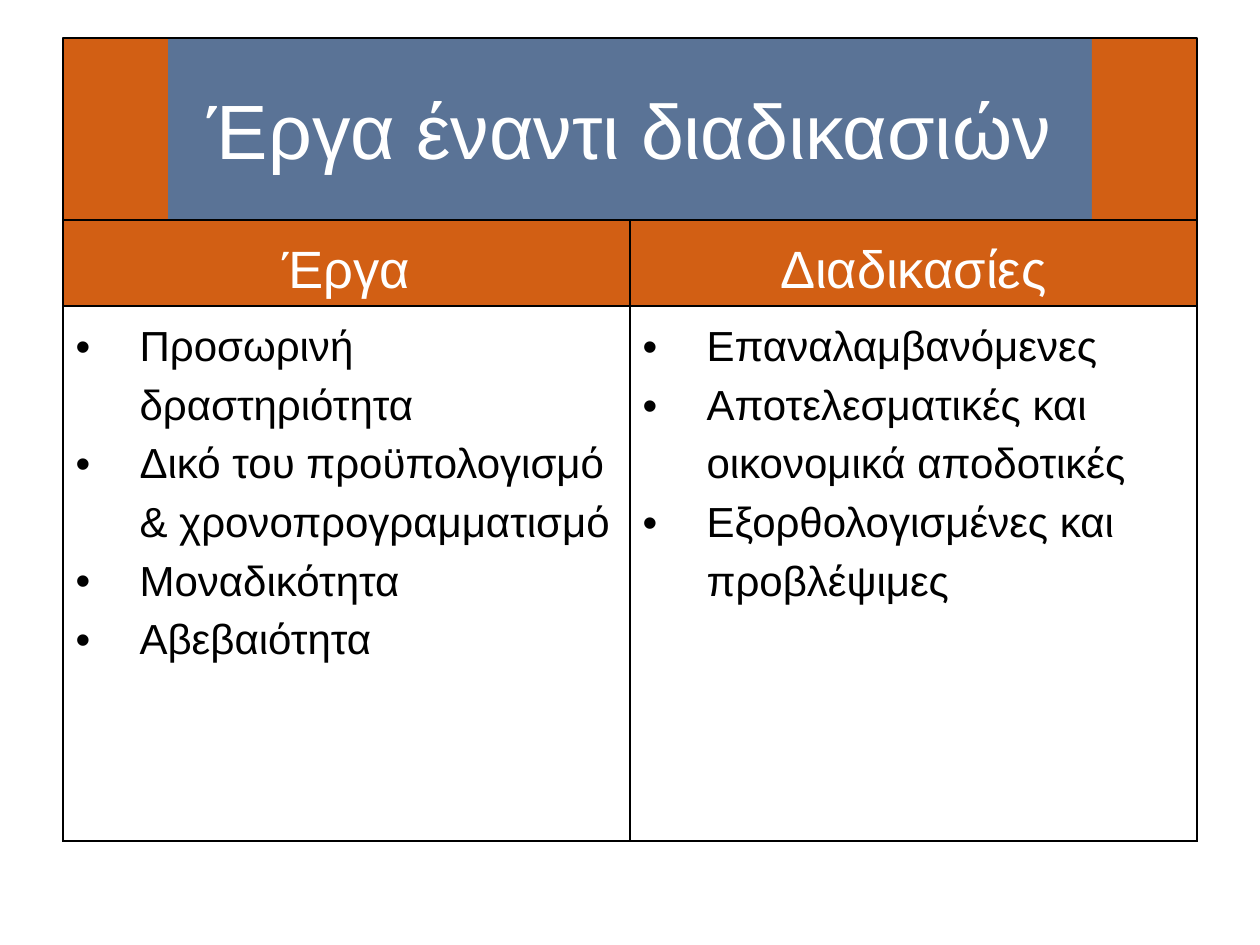
import pptx
import pptx.dml.color
import pptx.enum.shapes
import pptx.enum.text
import pptx.oxml.ns
import pptx.util
from lxml import etree

EMU_PER_PX = 914400 / 126
ALIGN = pptx.enum.text.PP_ALIGN
MIDDLE = pptx.enum.text.MSO_ANCHOR.MIDDLE
RECTANGLE = pptx.enum.shapes.MSO_SHAPE.RECTANGLE

BLACK, WHITE = "000000", "FFFFFF"
ORANGE, BLUE = "D25F14", "5A7396"
TITLE = {"size": pptx.util.Pt(44), "name": "Arial"}
HEADING = {"size": pptx.util.Pt(30), "name": "Arial"}
BODY = {"size": pptx.util.Pt(24), "name": "Arial"}

COLUMNS = {
    "Έργα": [
        "Προσωρινή δραστηριότητα",
        "Δικό του προϋπολογισμό & χρονοπρογραμματισμό",
        "Μοναδικότητα",
        "Αβεβαιότητα",
    ],
    "Διαδικασίες": [
        "Επαναλαμβανόμενες",
        "Αποτελεσματικές και οικονομικά αποδοτικές",
        "Εξορθολογισμένες και προβλέψιμες",
    ],
}


def px(length):
    return pptx.util.Emu(round(length * EMU_PER_PX))


def color(value):
    return pptx.dml.color.RGBColor.from_string(value)


def apply(target, values):
    for name, value in values.items():
        setattr(target, name, value)


def add_element(parent, tag, **attributes):
    return etree.SubElement(parent, pptx.oxml.ns.qn(tag), attributes)


class SlideBuilder:
    line_width = pptx.util.Pt(1)
    line_spacing = 1.25
    bullet_indent = 64

    def __init__(self, slide):
        self.slide = slide

    def add_text(self, paragraph, text, font, text_color, **layout):
        apply(paragraph, layout)
        run = paragraph.add_run()
        run.text = text
        apply(run.font, font)
        run.font.color.rgb = color(text_color)

    def rectangle(self, left, top, width, height, fill=None, line=None):
        shape = self.slide.shapes.add_shape(
            RECTANGLE, px(left), px(top), px(width), px(height))
        shape.shadow.inherit = False
        if fill:
            shape.fill.solid()
            shape.fill.fore_color.rgb = color(fill)
        else:
            shape.fill.background()
        if line:
            shape.line.color.rgb = color(line)
            shape.line.width = self.line_width
        else:
            shape.line.fill.background()
        return shape

    def title(self, text, *box):
        frame = self.rectangle(*box, fill=BLUE).text_frame
        apply(frame, {"word_wrap": True, "vertical_anchor": MIDDLE})
        self.add_text(frame.paragraphs[0], text, TITLE, WHITE, alignment=ALIGN.CENTER)

    def bullet(self, paragraph):
        properties = paragraph._p.get_or_add_pPr()
        indent = px(self.bullet_indent)
        for name, value in {"marL": indent, "indent": -indent}.items():
            properties.set(name, str(value))
        add_element(properties, "a:buFont", typeface="Arial")
        add_element(properties, "a:buChar", char="•")

    def style_cell(self, cell, fill=None):
        properties = cell._tc.get_or_add_tcPr()
        for side in ("a:lnL", "a:lnR", "a:lnT", "a:lnB"):
            border = add_element(properties, side, w=str(self.line_width))
            add_element(add_element(border, "a:solidFill"), "a:srgbClr", val=BLACK)
        if fill:
            cell.fill.solid()
            cell.fill.fore_color.rgb = color(fill)
        else:
            cell.fill.background()

    def table(self, columns, left, top, width, row_heights):
        table = self.slide.shapes.add_table(
            len(row_heights), len(columns), px(left), px(top),
            px(width), px(sum(row_heights))).table
        apply(table, {"first_row": False, "horz_banding": False})
        for row, height in zip(table.rows, row_heights):
            row.height = px(height)
        for index, (heading, items) in enumerate(columns.items()):
            table.columns[index].width = px(width / len(columns))
            header, body = table.cell(0, index), table.cell(1, index)
            self.style_cell(header, ORANGE)
            self.add_text(header.text_frame.paragraphs[0], heading, HEADING, WHITE,
                          alignment=ALIGN.CENTER, line_spacing=self.line_spacing)
            self.style_cell(body)
            frame = body.text_frame
            for number, item in enumerate(items):
                paragraph = frame.add_paragraph() if number else frame.paragraphs[0]
                self.add_text(paragraph, item, BODY, BLACK,
                              alignment=ALIGN.LEFT, line_spacing=self.line_spacing)
                self.bullet(paragraph)


def main():
    presentation = pptx.Presentation()
    apply(presentation, {"slide_width": px(1260), "slide_height": px(945)})
    slide = presentation.slides.add_slide(presentation.slide_layouts[6])
    builder = SlideBuilder(slide)
    left, top, width, height, side = 63, 38, 1134, 182, 105

    # Comparison table
    builder.table(COLUMNS, left, top + height, width, [63, 535])

    # Title band with a coloured block at each end
    builder.title("Έργα έναντι διαδικασιών", left, top, width, height)
    for block_left in (left, left + width - side):
        builder.rectangle(block_left, top, side, height, fill=ORANGE)

    # Title frame
    builder.rectangle(left, top, width, height, line=BLACK)

    presentation.save("out.pptx")


if __name__ == "__main__":
    main()
